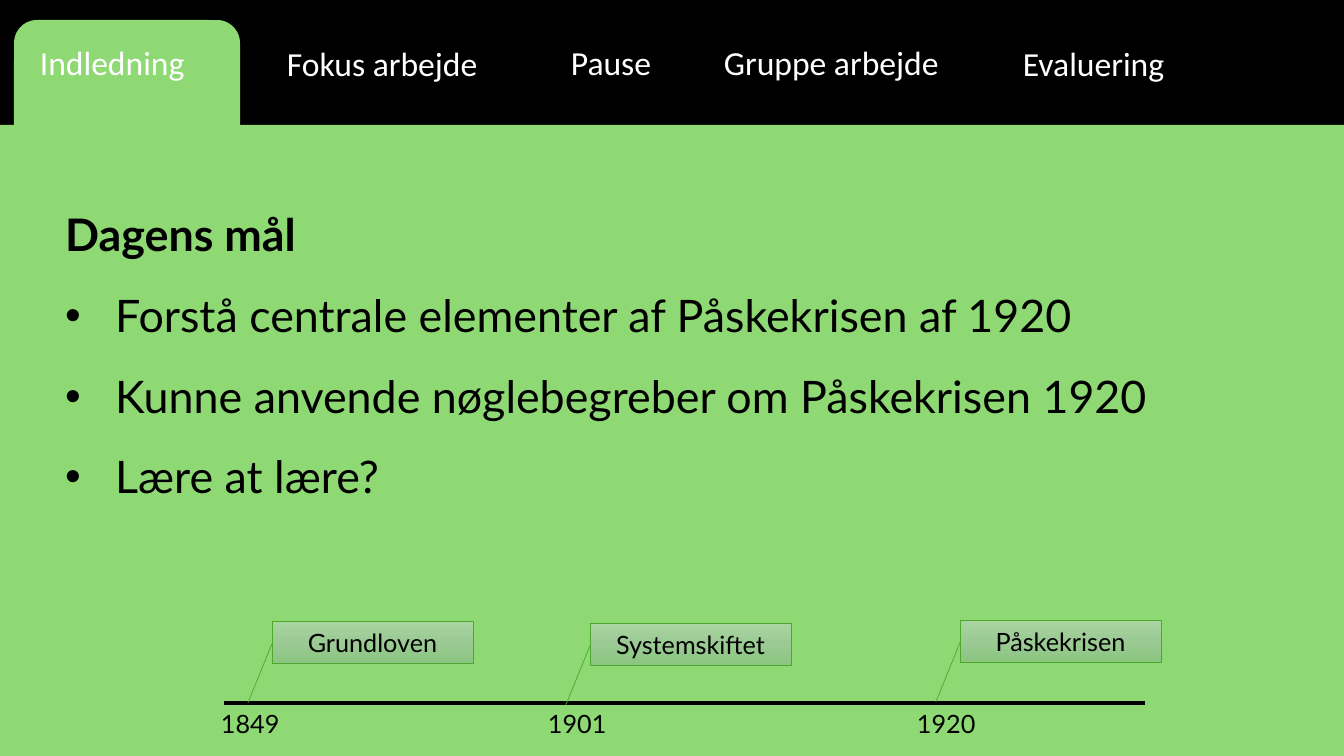
from copy import deepcopy

from lxml import etree
from pptx import Presentation
from pptx import util as u
from pptx.dml.color import RGBColor
from pptx.enum import shapes, text
from pptx.oxml import ns

SCALE = 914400 / 100.8  # EMU per px
WIDTH, HEIGHT = 1344, 756
COLOURS = {
    "bar": "000000", "page": "8ED973", "tab": "FFFFFF", "ink": "000000",
    "callout_line": "4EA72E",
    "callout_top": "A8D5A0", "callout_middle": "9CCA94", "callout_bottom": "8AC680",
}
TAB_FONT = {"name": "Calibri", "size": u.Pt(24)}
GOAL_FONT = {"name": "Lato", "size": u.Pt(32), "bold": False}
HEADING_FONT = {**GOAL_FONT, "bold": True}
TIMELINE_FONT = {"name": "Lato", "size": u.Pt(18)}
GOAL_LINES = {"line_spacing": 1.5, "space_before": u.Pt(0),
              "alignment": text.PP_ALIGN.LEFT}


def px(*lengths):
    return [u.Emu(round(length * SCALE)) for length in lengths]


def colour(name):
    return RGBColor.from_string(COLOURS[name])


def apply(target, values):
    for name, value in values.items():
        setattr(target, name, value)


def write(shape, lines, font, ink="ink", paragraph_format=None, bullet=None, **frame_format):
    frame = shape.text_frame
    apply(frame, {"word_wrap": True, "auto_size": text.MSO_AUTO_SIZE.NONE, **frame_format})
    frame.text = "\n".join(lines)
    for paragraph in frame.paragraphs:
        apply(paragraph, paragraph_format or {})
        if bullet:
            properties = paragraph._p.get_or_add_pPr()
            indent = round(bullet * SCALE)
            properties.set("marL", str(indent))
            properties.set("indent", str(-indent))
            etree.SubElement(properties, ns.qn("a:buFont")).set("typeface", "Arial")
            etree.SubElement(properties, ns.qn("a:buChar")).set("char", "•")
        for run in paragraph.runs:
            apply(run.font, font)
            run.font.color.rgb = colour(ink)


def add_label(slide, box, label, font, ink="ink"):
    write(slide.shapes.add_textbox(*px(*box)), [label], font, ink)


def add_panel(slide, kind, box):
    panel = slide.shapes.add_shape(kind, *px(*box))
    panel.shadow.inherit = False
    panel.fill.solid()
    panel.fill.fore_color.rgb = colour("page")
    panel.line.fill.background()
    # Panels lie behind the placeholders
    slide.shapes._spTree.insert(2, panel._element)


def add_navigation(slide, box, tabs):
    left, top, width, height = box
    # Page below the bar, joined to the active tab
    add_panel(slide, shapes.MSO_SHAPE.RECTANGLE,
              (left, top + height, width, HEIGHT - top - height))
    add_panel(slide, shapes.MSO_SHAPE.ROUNDED_RECTANGLE, (left + 14, top + 20, 226, 138))
    for label, x, y, label_width in tabs:
        add_label(slide, (left + x, top + y, label_width, 50), label, TAB_FONT, "tab")


def add_goals(slide, box, heading, goals):
    left, top, width, height = box
    line = 81
    title, body = slide.shapes.title, slide.placeholders[1]
    parts = [
        (title, top, line + 10, [heading], HEADING_FONT, None),
        (body, top + line, height - line, goals, GOAL_FONT, 50),
    ]
    for shape, y, part_height, lines, font, bullet in parts:
        apply(shape, dict(zip(("left", "top", "width", "height"),
                              px(left, y, width, part_height))))
        write(shape, lines, font, paragraph_format=GOAL_LINES, bullet=bullet,
              vertical_anchor=text.MSO_ANCHOR.TOP)


def add_callout(slide, box, label):
    callout = slide.shapes.add_shape(shapes.MSO_SHAPE.LINE_CALLOUT_1, *px(*box))
    callout.shadow.inherit = False
    for index, value in enumerate((0.54, 0, 1.95, -0.12)):
        callout.adjustments[index] = value
    # Three-stop gradient, light at the top
    callout.fill.gradient()
    callout.fill.gradient_angle = 270
    stop_list = callout._element.spPr.find(".//" + ns.qn("a:gsLst"))
    stop_list.insert(1, deepcopy(stop_list[0]))
    names = ("callout_top", "callout_middle", "callout_bottom")
    for index, (stop, name) in enumerate(zip(callout.fill.gradient_stops, names)):
        stop.position = index / 2
        stop.color.rgb = colour(name)
    callout.line.color.rgb = colour("callout_line")
    callout.line.width = u.Pt(0.5)
    write(callout, [label], TIMELINE_FONT,
          paragraph_format={"alignment": text.PP_ALIGN.CENTER},
          vertical_anchor=text.MSO_ANCHOR.MIDDLE)


def add_timeline(slide, box, events):
    left, top, width, height = box
    axis_y = top + height
    axis = slide.shapes.add_connector(
        shapes.MSO_CONNECTOR.STRAIGHT, *px(left, axis_y, left + width, axis_y))
    axis.line.color.rgb = colour("ink")
    axis.line.width = u.Pt(2.25)
    etree.SubElement(axis._element.spPr, ns.qn("a:effectLst"))
    for year, label, year_x, callout_x, callout_y in events:
        add_callout(slide, (left + callout_x, top + callout_y, 201, 42), label)
        add_label(slide, (left + year_x, axis_y, 420, 32), year, TIMELINE_FONT)


def main():
    presentation = Presentation()
    presentation.slide_width, presentation.slide_height = px(WIDTH, HEIGHT)
    slide = presentation.slides.add_slide(presentation.slide_layouts[1])
    slide.background.fill.solid()
    slide.background.fill.fore_color.rgb = colour("bar")

    # Lesson stages: label, x, y, width
    add_navigation(slide, (0, 0, WIDTH, 125), [
        ("Indledning", 30, 37, 217),
        ("Fokus arbejde", 277, 38, 254),
        ("Pause", 561, 37, 122),
        ("Gruppe arbejde", 714, 37, 269),
        ("Evaluering", 1013, 38, 217),
    ])
    add_goals(slide, (55, 175, 1256, 328), "Dagens mål", [
        "Forstå centrale elementer af Påskekrisen af 1920",
        "Kunne anvende nøglebegreber om Påskekrisen 1920",
        "Lære at lære?",
    ])
    # Events: year, label, year x, callout x, callout y
    add_timeline(slide, (224, 621, 921, 82), [
        ("1849", "Grundloven", -13, 48, 0),
        ("1901", "Systemskiftet", 314, 366, 2),
        ("1920", "Påskekrisen", 683, 736, -1),
    ])
    presentation.save("out.pptx")


if __name__ == "__main__":
    main()
